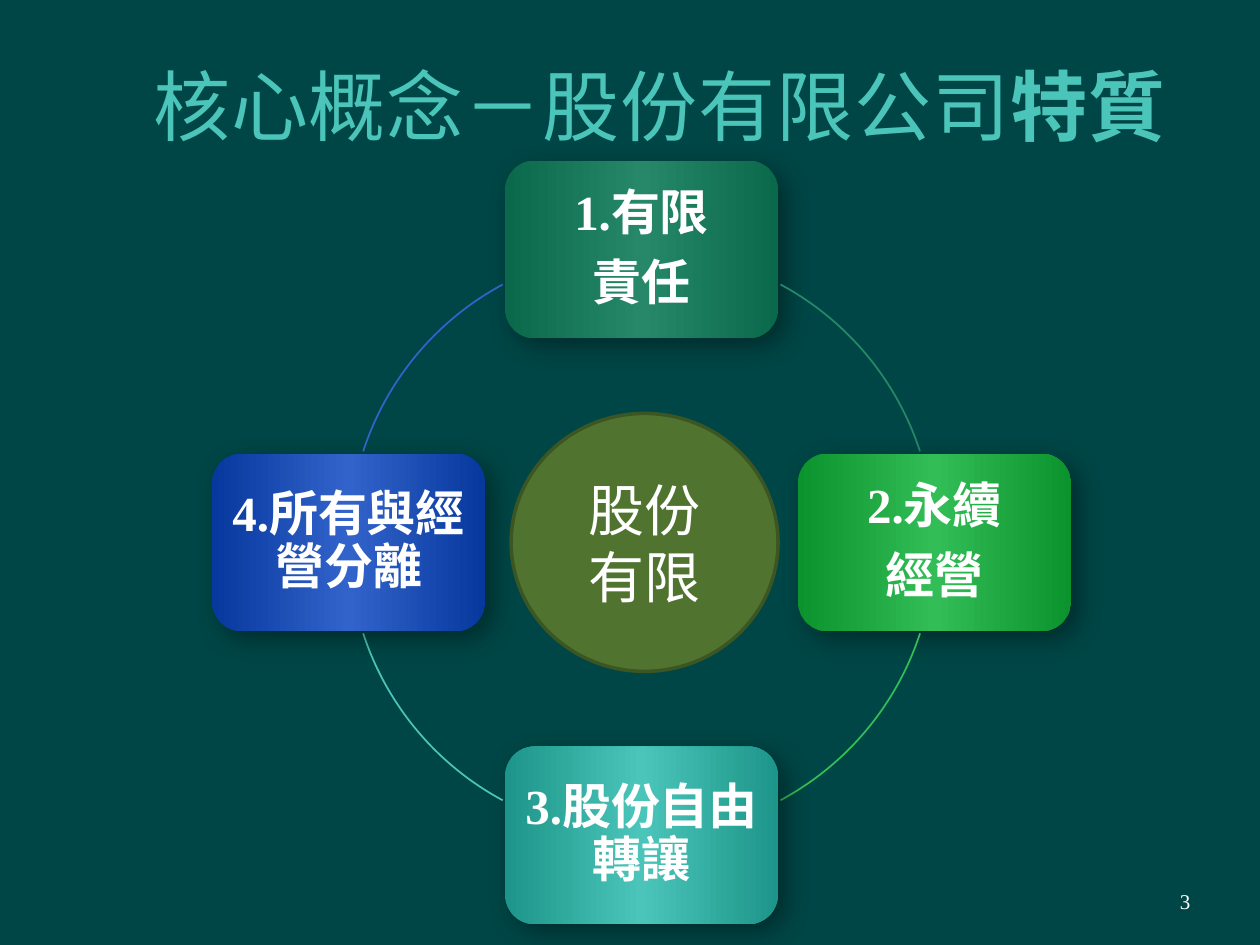
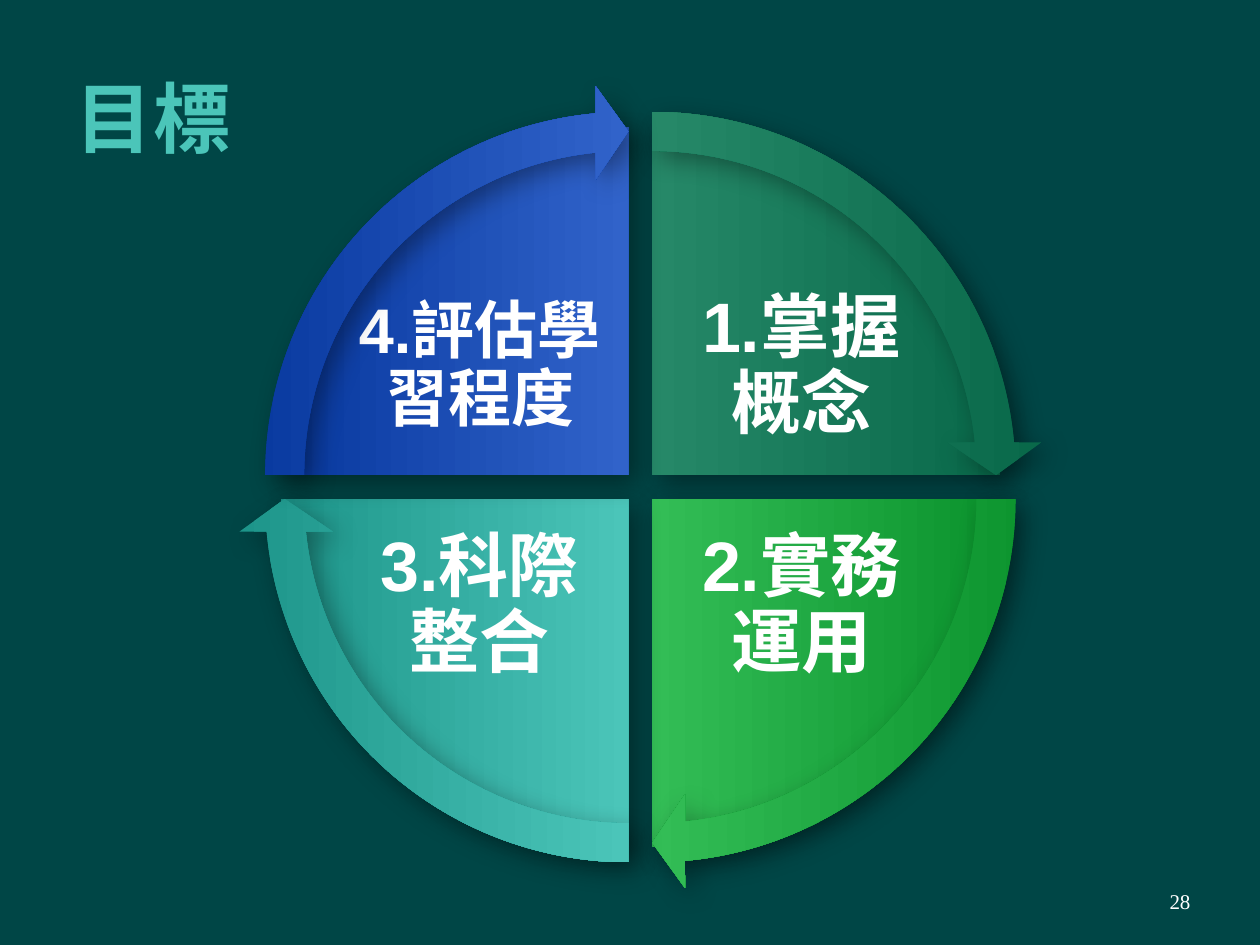
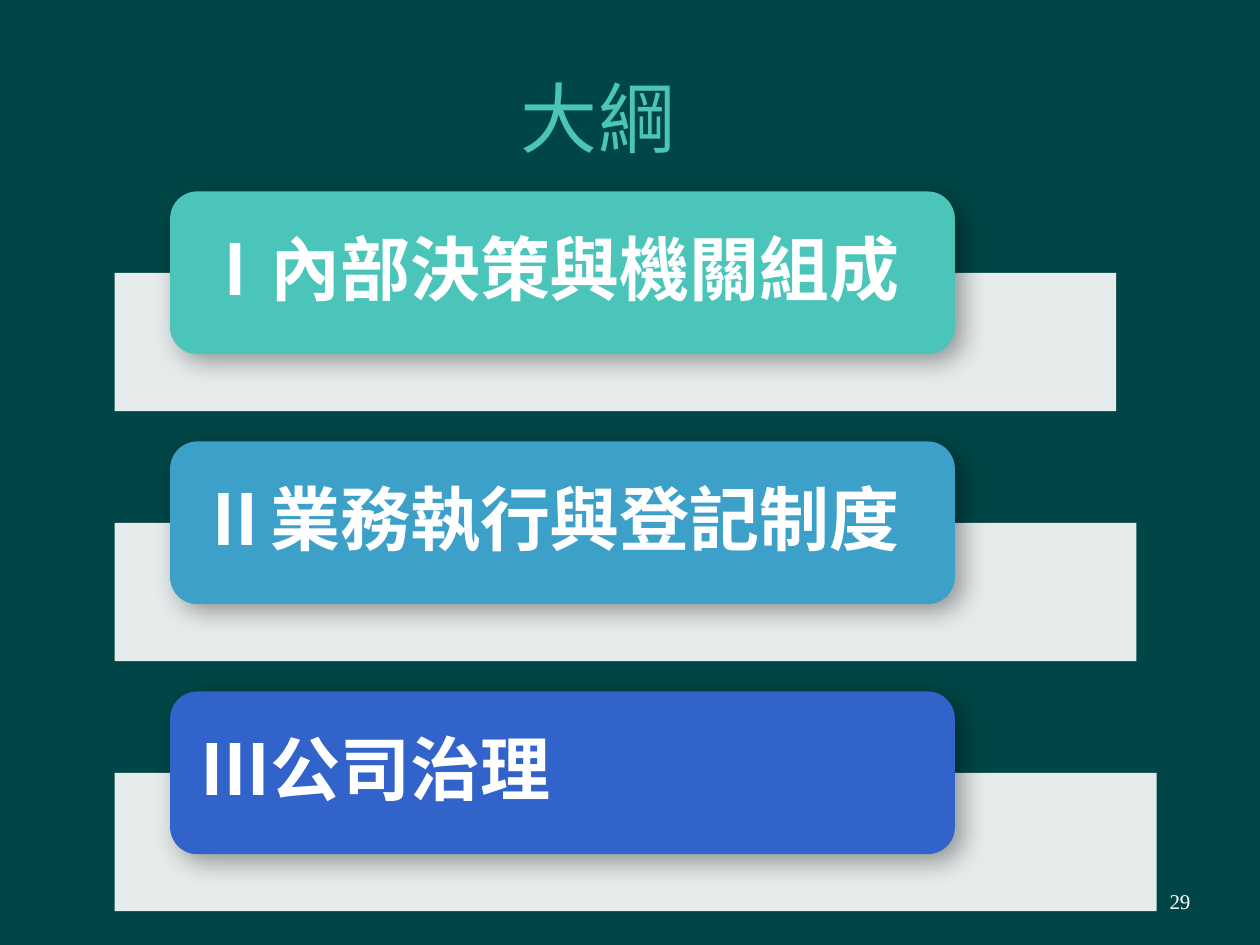
"""Build three slides on the features, goals and outline of a company law course."""
from copy import deepcopy
from math import cos, radians, sin

from lxml import etree
from pptx import Presentation
from pptx.dml.color import RGBColor
from pptx.enum import shapes, text
from pptx.oxml import ns
from pptx.util import Cm, Pt

SHAPE = shapes.MSO_SHAPE
ALIGN = text.PP_ALIGN
COLOURS = {
    "ground": "004646", "title": "4BC5B9", "white": "FFFFFF",
    "pine": "268868", "pine_dark": "09694A",
    "green": "33BD56", "green_dark": "0B932D",
    "teal": "4BC5B9", "teal_dark": "1D958A",
    "blue": "3163CA", "blue_dark": "07389E",
    "sky": "3DA0C8", "olive": "50742F", "olive_dark": "3B5623",
}
CYCLE = ["pine", "green", "teal", "blue"]
HEADING_BOX = (1.27, 0.76, 21.59, 3.18)


def colour(name):
    """Return the named colour."""
    return RGBColor.from_string(COLOURS[name])


def add_element(parent, tag, **attributes):
    """Append a drawing element with the given attributes."""
    child = etree.SubElement(parent, ns.qn(tag))
    for key, value in attributes.items():
        child.set(key, str(value))
    return child


def add_span(para, words, size, font="Arial", bold=False, tint="white"):
    """Append one formatted run to a paragraph."""
    span = para.add_run()
    span.text = words
    span.font.size = Pt(size)
    span.font.name = font
    span.font.bold = bold
    span.font.color.rgb = colour(tint)
    return span


def set_frame(frame, inset=(0.25, 0.13)):
    """Wrap and vertically centre a text frame with the given insets."""
    frame.word_wrap = True
    frame.auto_size = text.MSO_AUTO_SIZE.NONE
    frame.vertical_anchor = text.MSO_ANCHOR.MIDDLE
    frame.margin_left = frame.margin_right = Cm(inset[0])
    frame.margin_top = frame.margin_bottom = Cm(inset[1])


def write_label(box, lines, size, inset, font="Arial", align=ALIGN.CENTER):
    """Write bold diagram text, one paragraph a line."""
    frame = box.text_frame
    set_frame(frame, inset)
    for index, line in enumerate(lines):
        para = frame.add_paragraph() if index else frame.paragraphs[0]
        para.alignment = align
        para.line_spacing = 0.9
        para.space_after = Pt(round(size * 0.35, 1))
        add_span(para, line, size, font, bold=True)


def add_plain(page, kind, box, adjustments=()):
    """Add a shape without line or shadow."""
    shape = page.shapes.add_shape(kind, *map(Cm, box))
    shape.shadow.inherit = False
    shape.line.fill.background()
    for index, value in enumerate(adjustments):
        shape.adjustments[index] = value
    return shape


def fill_solid(shape, name):
    """Fill a shape with one colour."""
    shape.fill.solid()
    shape.fill.fore_color.rgb = colour(name)


def fill_sheen(shape, name):
    """Fill a shape from dark through light to dark, left to right."""
    shape.fill.gradient()
    shape.fill.gradient_angle = 0
    edge, middle = shape.fill.gradient_stops
    edge.color.rgb, edge.position = colour(name + "_dark"), 0
    middle.color.rgb, middle.position = colour(name), 0.5
    stops = shape._element.spPr.find(".//" + ns.qn("a:gsLst"))
    far_edge = deepcopy(stops[0])
    far_edge.set("pos", "100000")
    stops.append(far_edge)


def cast_shadow(shape):
    """Give a shape a soft shadow to its lower right."""
    effects = shape._element.spPr.find(ns.qn("a:effectLst"))
    shadow = add_element(effects, "a:outerShdw", blurRad=Pt(15), dist=Pt(6.2),
                         dir=45 * 60000, algn="tl", rotWithShape=0)
    tint = add_element(shadow, "a:srgbClr", val="000000")
    add_element(tint, "a:alpha", val=36000)


def add_glossy(page, kind, box, name, adjustments=()):
    """Add a shape with a sheen and a shadow."""
    shape = add_plain(page, kind, box, adjustments)
    fill_sheen(shape, name)
    cast_shadow(shape)
    return shape


def add_page(deck, number, title, box=HEADING_BOX, align=ALIGN.CENTER):
    """Add a slide with its title, given as (words, bold) pairs, and number."""
    page = deck.slides.add_slide(deck.slide_layouts[5])
    heading = page.shapes.title
    heading.left, heading.top, heading.width, heading.height = map(Cm, box)
    set_frame(heading.text_frame)
    para = heading.text_frame.paragraphs[0]
    para.alignment = align
    for words, bold in title:
        span = add_span(para, words, 44, bold=bold, tint="title")
        span.font._element.set("spc", "50")
    footer = page.shapes.add_textbox(Cm(18.21), Cm(17.65), Cm(5.92), Cm(1.02))
    set_frame(footer.text_frame, (0.13, 0.13))
    para = footer.text_frame.paragraphs[0]
    para.alignment = ALIGN.RIGHT
    add_span(para, str(number), 12, "Times New Roman")
    return page


def draw_ring(page, box, centre_words, cards):
    """Draw cards on a ring, joined by arcs, around a central disc."""
    left, top, size = box
    radius = size / 2
    middle_x, middle_y = left + radius, top + radius
    width, height = 5.51, 3.58
    gaps = [28.3, 18.1]
    for index, (name, lines) in enumerate(zip(CYCLE, cards)):
        angle = 270 + 90 * index
        x = middle_x + radius * cos(radians(angle))
        y = middle_y + radius * sin(radians(angle))
        card = add_glossy(page, SHAPE.ROUNDED_RECTANGLE,
                          (x - width / 2, y - height / 2, width, height), name)
        write_label(card, lines, 28, (0.13, 0.13), "Times New Roman")
        start = (angle + gaps[index % 2]) % 360
        end = (angle + 90 - gaps[1 - index % 2]) % 360
        arc = add_plain(page, SHAPE.ARC, (left, top, size, size),
                        (start * 0.6, end * 0.6))
        arc.fill.background()
        arc.line.color.rgb = colour(name)
        arc.line.width = Pt(1)
    disc = add_plain(page, SHAPE.OVAL, (middle_x - 2.63, middle_y - 2.6, 5.38, 5.2))
    fill_solid(disc, "olive")
    disc.line.color.rgb = colour("olive_dark")
    disc.line.width = Pt(2)
    set_frame(disc.text_frame)
    para = disc.text_frame.paragraphs[0]
    para.alignment = ALIGN.CENTER
    add_span(para, centre_words, 32)


def draw_quarters(page, box, goals):
    """Draw four labelled quarters of a pie, then the arrows that circle them."""
    left, top, size = box
    pie, arrow = 14.02, 15.75
    gap, overhang = size - pie, (arrow - pie) / 2
    label_width, label_height, indent_x, indent_y = 5.18, 3.84, 1.42, 2.92
    arrows = []
    for index, (name, (words, points, inset)) in enumerate(zip(CYCLE, goals)):
        on_right, on_bottom = index in (0, 1), index in (1, 2)
        x, y = left + gap * on_right, top + gap * on_bottom
        start = (270 + 90 * index) % 360 * 0.6
        end = start + 54
        add_glossy(page, SHAPE.PIE, (x, y, pie, pie), name, (start, end % 216))
        label_x = size - indent_x - label_width if on_right else indent_x
        label_y = size - indent_y - label_height if on_bottom else indent_y
        label = page.shapes.add_textbox(Cm(left + label_x), Cm(top + label_y),
                                        Cm(label_width), Cm(label_height))
        write_label(label, [words], points, (inset, inset))
        arrows.append(((x - overhang, y - overhang, arrow, arrow), name,
                       (0.05, 3.28, end - 3.28, start, 0.06)))
    for place, name, adjustments in arrows:
        add_glossy(page, SHAPE.CIRCULAR_ARROW, place, name, adjustments)


def draw_outline(page, box, chapters):
    """Draw chapter cards, each over a pale strip wider than the last."""
    left, top, width = box
    for index, (name, words) in enumerate(chapters):
        y = top + 5.04 * index
        strip = add_plain(page, SHAPE.RECTANGLE,
                          (left, y + 1.64, width + 0.41 * index, 2.79))
        fill_solid(strip, "white")
        tint = strip._element.spPr.find(".//" + ns.qn("a:srgbClr"))
        add_element(tint, "a:alpha", val=90000)
        card = add_plain(page, SHAPE.ROUNDED_RECTANGLE,
                         (left + 1.12, y, 15.82, 3.28))
        fill_solid(card, name)
        cast_shadow(card)
        write_label(card, [words], 40, (0.45, 0), align=ALIGN.LEFT)


def main():
    """Build and save the deck."""
    deck = Presentation()
    deck.slide_width, deck.slide_height = Cm(25.4), Cm(19.05)
    ground = deck.slide_master.background.fill
    ground.solid()
    ground.fore_color.rgb = colour("ground")

    page = add_page(deck, 3, [("核心概念－股份有限公司", False), ("特質", True)],
                    (1.7, 0.53, 23.19, 3.18))
    draw_ring(page, (7.03, 5.03, 11.81), "股份有限",
              [["1.有限", "責任"], ["2.永續", "經營"],
               ["3.股份自由轉讓"], ["4.所有與經營分離"]])

    page = add_page(deck, 28, [("目標", True)], align=ALIGN.LEFT)
    draw_quarters(page, (5.66, 2.57, 14.5),
                  [("1.掌握概念", 40, 0.15), ("2.實務運用", 40, 0.15),
                   ("3.科際整合", 40, 0.15), ("4.評估學習程度", 36, 0.13)])

    page = add_page(deck, 29, [("大綱", False)])
    draw_outline(page, (2.31, 3.86, 20.19),
                 [("teal", "Ⅰ內部決策與機關組成"),
                  ("sky", "Ⅱ業務執行與登記制度"),
                  ("blue", "Ⅲ公司治理")])
    deck.save("out.pptx")


if __name__ == "__main__":
    main()
